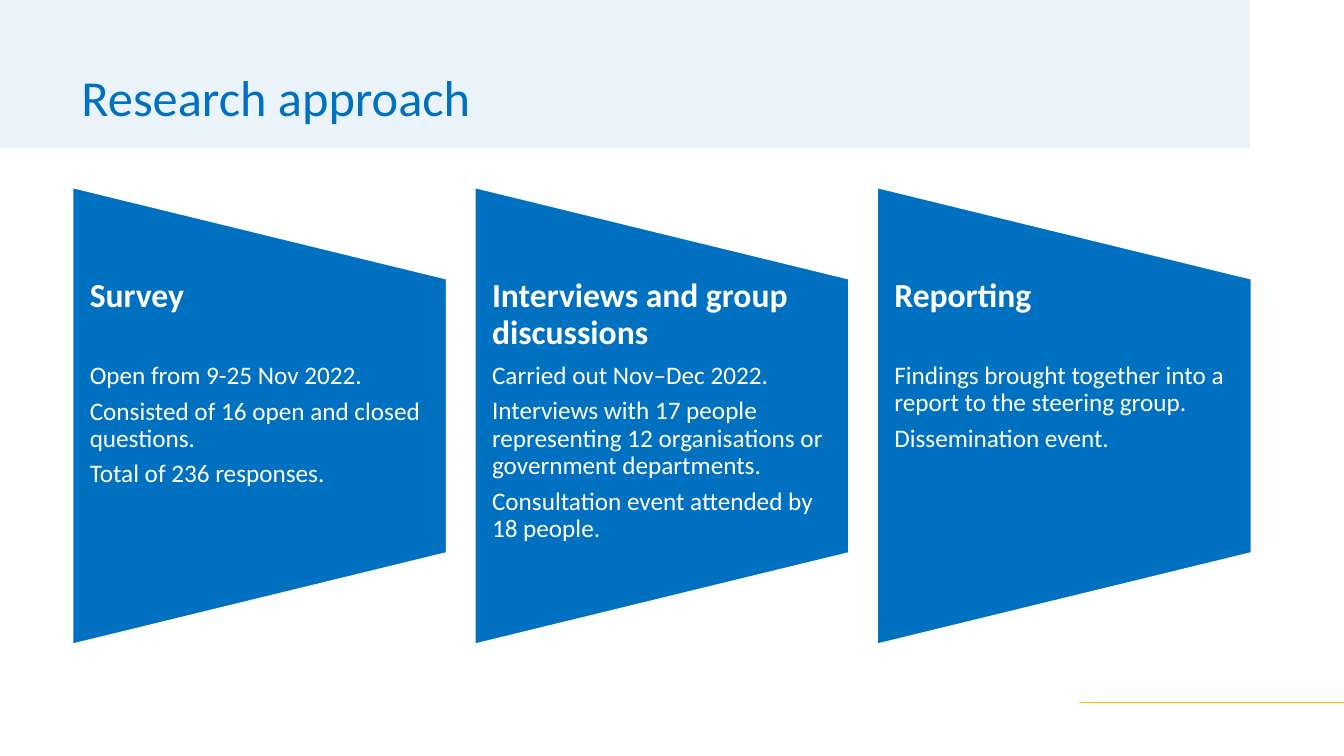
from lxml.etree import SubElement
from pptx import Presentation
from pptx.dml.color import RGBColor
from pptx.enum.shapes import MSO_CONNECTOR, MSO_SHAPE
from pptx.enum.text import MSO_ANCHOR, PP_ALIGN
from pptx.oxml.ns import qn
from pptx.util import Inches, Pt

BLUE, WHITE, GOLD = "0070C0", "FFFFFF", "FFC000"
WIDTH, HEIGHT = 13.33, 7.5

# Three stage columns
STAGE_LEFT, STAGE_WIDTH, STAGE_PITCH = 0.72, 3.71, 3.99
STAGE_TOP, STAGE_HEIGHT = 1.86, 4.53
TEXT_TOP, TEXT_HEIGHT = STAGE_TOP + 0.2 * STAGE_HEIGHT, 0.6 * STAGE_HEIGHT

# Heading, space after it in points, details
STAGES = [
    ("Survey", 34, [
        "Open from 9-25 Nov 2022.",
        "Consisted of 16 open and closed questions.",
        "Total of 236 responses.",
    ]),
    ("Interviews and group discussions", 8, [
        "Carried out Nov–Dec 2022.",
        "Interviews with 17 people representing 12 organisations or government departments.",
        "Consultation event attended by 18 people.",
    ]),
    ("Reporting", 34, [
        "Findings brought together into a report to the steering group.",
        "Dissemination event.",
    ]),
]


def rgb(code):
    return RGBColor.from_string(code)


def add_text(left, top, width, height, lines, color=WHITE, inset=0.1, inset_top=0.0):
    """Add a text box; each line is (text, size, bold, space after)."""
    frame = slide.shapes.add_textbox(
        Inches(left), Inches(top), Inches(width), Inches(height)).text_frame
    frame.word_wrap = True
    frame.vertical_anchor = MSO_ANCHOR.TOP
    frame.margin_left = frame.margin_right = Inches(inset)
    frame.margin_top = frame.margin_bottom = Inches(inset_top)
    for index, (text, size, bold, gap) in enumerate(lines):
        paragraph = frame.paragraphs[0] if index == 0 else frame.add_paragraph()
        paragraph.alignment = PP_ALIGN.LEFT
        paragraph.line_spacing = 0.9
        paragraph.space_after = Pt(gap)
        run = paragraph.add_run()
        run.text = text
        run.font.name = "Calibri"
        run.font.size = Pt(size)
        run.font.bold = bold
        run.font.color.rgb = rgb(color)


presentation = Presentation()
presentation.slide_width, presentation.slide_height = Inches(WIDTH), Inches(HEIGHT)
slide = presentation.slides.add_slide(presentation.slide_layouts[6])

add_text(0.71, 0.68, 12.09, 1.03, [("Research approach", 36, False, 0)],
         color=BLUE, inset_top=0.05)

for column, (heading, heading_gap, details) in enumerate(STAGES):
    left = STAGE_LEFT + column * STAGE_PITCH
    # A quarter turn swaps width and height around the same centre
    turn_shift = (STAGE_HEIGHT - STAGE_WIDTH) / 2
    panel = slide.shapes.add_shape(
        MSO_SHAPE.FLOWCHART_MANUAL_OPERATION,
        Inches(left - turn_shift), Inches(STAGE_TOP + turn_shift),
        Inches(STAGE_HEIGHT), Inches(STAGE_WIDTH))
    panel.rotation = 270
    panel.shadow.inherit = False
    panel.fill.solid()
    panel.fill.fore_color.rgb = rgb(BLUE)
    panel.line.color.rgb = rgb(WHITE)
    panel.line.width = Pt(1)
    add_text(left, TEXT_TOP, STAGE_WIDTH, TEXT_HEIGHT,
             [(heading, 24, True, heading_gap)]
             + [(detail, 18, False, 6) for detail in details],
             inset=0.17)

title_band = slide.shapes.add_shape(
    MSO_SHAPE.RECTANGLE, 0, 0, Inches(0.93 * WIDTH), Inches(1.47))
title_band.shadow.inherit = False
title_band.fill.solid()
title_band.fill.fore_color.rgb = rgb(BLUE)
title_band.line.fill.background()
band_color = title_band.fill._xPr.find(qn("a:solidFill"))[0]
SubElement(band_color, qn("a:alpha")).set("val", "8000")

footer_rule = slide.shapes.add_connector(
    MSO_CONNECTOR.STRAIGHT,
    Inches(10.7), Inches(6.97), Inches(WIDTH), Inches(6.97))
footer_rule.line.color.rgb = rgb(GOLD)
footer_rule.line.width = Pt(1.25)
SubElement(footer_rule._element.spPr, qn("a:effectLst"))

presentation.save("out.pptx")
